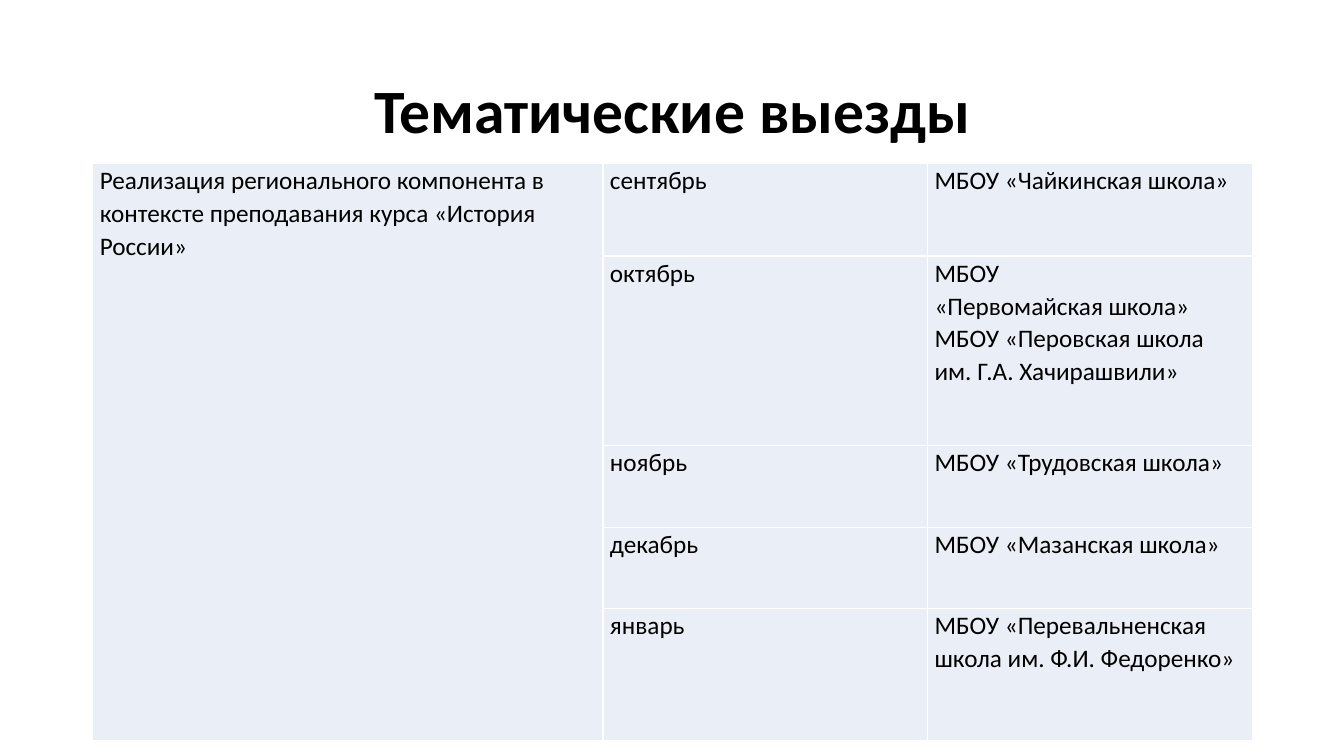
from dataclasses import dataclass

from lxml import etree
from pptx import Presentation
from pptx.dml.color import RGBColor
from pptx.enum import text
from pptx.oxml import ns
from pptx.util import Inches, Pt

COLORS = {"ink": "000000", "cell": "EAEFF7", "border": "FFFFFF"}
COLUMN_WIDTHS = (5.06, 3.22, 3.22)
CELL_FORMAT = {
    "margin_left": Inches(0.07),
    "margin_right": Inches(0.07),
    "margin_top": 0,
    "margin_bottom": 0,
    "vertical_anchor": text.MSO_ANCHOR.TOP,
}
TOPIC = (
    "Реализация регионального компонента в контексте "
    "преподавания курса «История России»"
)


@dataclass(frozen=True)
class Visit:
    month: str
    schools: tuple[str, ...]
    height: float


VISITS = (
    Visit("сентябрь", ("МБОУ «Чайкинская школа»",), 0.92),
    Visit(
        "октябрь",
        (
            "МБОУ",
            "«Первомайская школа»",
            "МБОУ «Перовская школа им. Г.А. Хачирашвили»",
        ),
        1.88,
    ),
    Visit("ноябрь", ("МБОУ «Трудовская школа»",), 0.81),
    Visit("декабрь", ("МБОУ «Мазанская школа»",), 0.81),
    Visit("январь", ("МБОУ «Перевальненская школа им. Ф.И. Федоренко»",), 1.31),
)


def write(frame, lines: tuple[str, ...], size: int, spacing: float,
          align: text.PP_ALIGN, bold: bool = False) -> None:
    frame.text = "\n".join(lines)
    font_format = {"name": "Calibri", "size": Pt(size), "bold": bold}
    for paragraph in frame.paragraphs:
        paragraph.alignment = align
        paragraph.line_spacing = spacing
        for run in paragraph.runs:
            for key, value in font_format.items():
                setattr(run.font, key, value)
            run.font.color.rgb = RGBColor.from_string(COLORS["ink"])


def style_cell(cell) -> None:
    """Set margins, white borders and fill."""
    for key, value in CELL_FORMAT.items():
        setattr(cell, key, value)
    properties = cell._tc.get_or_add_tcPr()
    for side in ("a:lnL", "a:lnR", "a:lnT", "a:lnB"):
        border = etree.SubElement(properties, ns.qn(side), w=str(Pt(1)))
        solid = etree.SubElement(border, ns.qn("a:solidFill"))
        etree.SubElement(solid, ns.qn("a:srgbClr"), val=COLORS["border"])
    cell.fill.solid()
    cell.fill.fore_color.rgb = RGBColor.from_string(COLORS["cell"])


def add_heading(slide) -> None:
    heading = slide.shapes.add_textbox(
        Inches(0.92), Inches(0.4), Inches(11.5), Inches(1.45)
    ).text_frame
    heading.word_wrap = True
    heading.vertical_anchor = text.MSO_ANCHOR.MIDDLE
    write(heading, ("Тематические выезды",), 44, 0.9, text.PP_ALIGN.CENTER, True)


def add_schedule(slide) -> None:
    schedule = slide.shapes.add_table(
        len(VISITS), len(COLUMN_WIDTHS), Inches(0.92), Inches(1.62),
        Inches(sum(COLUMN_WIDTHS)), Inches(sum(v.height for v in VISITS)),
    ).table
    schedule.first_row = schedule.horz_banding = False
    for column, width in zip(schedule.columns, COLUMN_WIDTHS):
        column.width = Inches(width)
    for index, visit in enumerate(VISITS):
        schedule.rows[index].height = Inches(visit.height)
        topic = (TOPIC,) if index == 0 else ()
        contents = (topic, (visit.month,), visit.schools)
        for cell, lines in zip(schedule.rows[index].cells, contents):
            style_cell(cell)
            write(cell.text_frame, lines, 18, 1.07, text.PP_ALIGN.LEFT)
    schedule.cell(0, 0).merge(schedule.cell(len(VISITS) - 1, 0))


def main() -> None:
    deck = Presentation()
    deck.slide_width, deck.slide_height = Inches(13.33), Inches(7.5)
    slide = deck.slides.add_slide(deck.slide_layouts[6])
    add_heading(slide)
    add_schedule(slide)
    deck.save("out.pptx")


if __name__ == "__main__":
    main()
